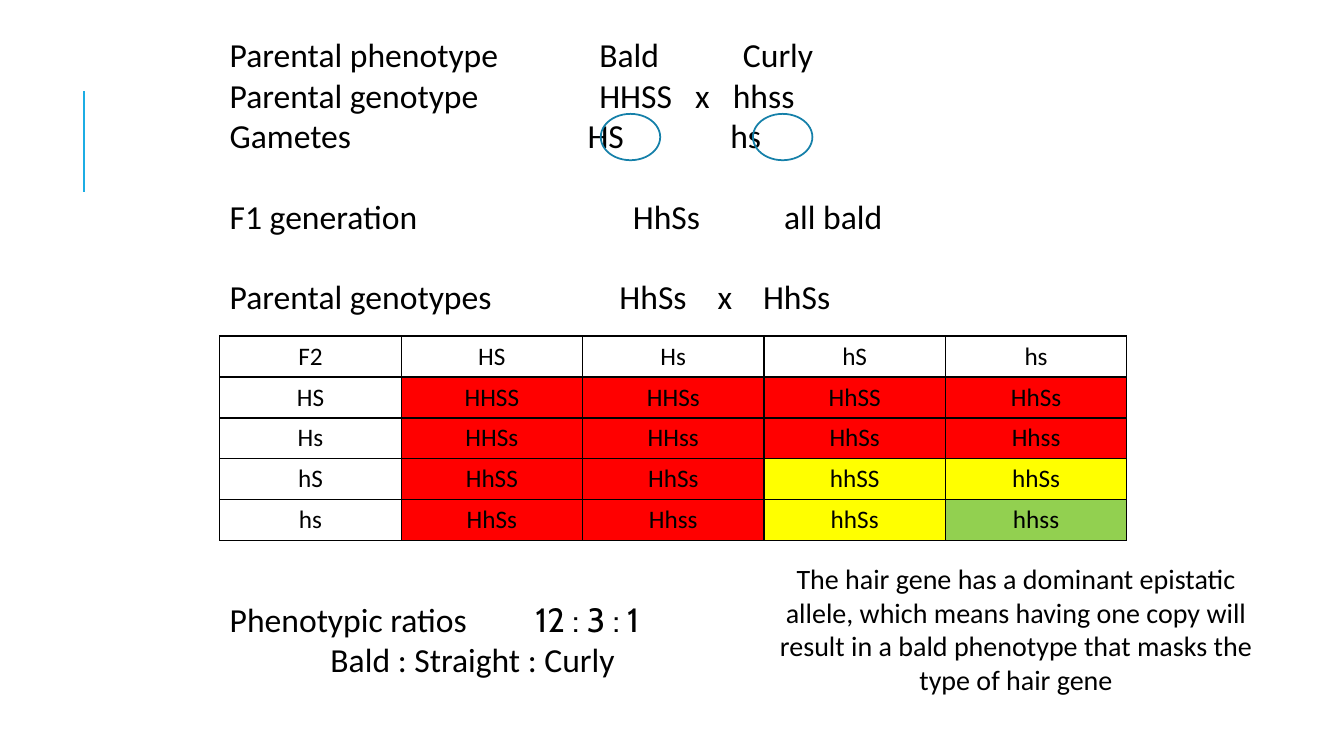
import dataclasses

import pptx
import pptx.dml.color
import pptx.enum.shapes
import pptx.enum.text
import pptx.oxml
import pptx.oxml.ns
import pptx.util

COLUMNS, ROWS = 160, 90
SLIDE_WIDTH = pptx.util.Inches(13.33)
SLIDE_HEIGHT = pptx.util.Inches(7.5)
GAMETES = ["HS", "Hs", "hS", "hs"]

# Lines of the cross: blank lines before, texts, tab columns
CROSS_LINES = [
    (0, ["Parental phenotype", "Bald", "Curly"], [44, 61.1]),
    (0, ["Parental genotype", "HHSS", "x", "hhss"], [44, 55.4, 59.9]),
    (0, ["Gametes", "HS", "hs"], [42.6, 59.6]),
    (1, ["F1 generation", "HhSs", "all bald"], [48, 66]),
    (1, ["Parental genotypes", "HhSs", "x", "HhSs"], [46.4, 58.1, 63.5]),
    (7, ["Phenotypic ratios", "12 : 3 : 1"], [36.4]),
    (0, ["", "Bald : Straight : Curly"], [12]),
]
NOTE = ("The hair gene has a dominant epistatic allele, which means having one copy "
        "will result in a bald phenotype that masks the type of hair gene")


@dataclasses.dataclass(frozen=True)
class Theme:
    font: str = "Calibri"
    ratio_font: str = "Cabin"
    cross_size: int = 24
    note_size: int = 20
    table_size: int = 18
    line_spacing: float = 1.2
    text: str = "000000"
    rule: str = "1CADE4"
    ring: str = "1580A9"
    bald: str = "FF0000"
    straight: str = "FFFF00"
    curly: str = "92D050"


THEME = Theme()


def across(columns):
    return round(SLIDE_WIDTH * columns / COLUMNS)


def down(rows):
    return round(SLIDE_HEIGHT * rows / ROWS)


def place(left, top, width, height):
    return across(left), down(top), across(width), down(height)


def color(value):
    return pptx.dml.color.RGBColor.from_string(value)


def apply_format(target, values):
    for name, value in values.items():
        setattr(target, name, value)


def add_run(paragraph, text, size, font=THEME.font):
    run = paragraph.add_run()
    run.text = text
    apply_format(run.font, {"name": font, "size": pptx.util.Pt(size)})
    run.font.color.rgb = color(THEME.text)


def add_text_box(slide, *box):
    frame = slide.shapes.add_textbox(*place(*box)).text_frame
    frame.word_wrap = True
    return frame


def set_tabs(paragraph, columns):
    properties = paragraph._p.get_or_add_pPr()
    tabs = pptx.oxml.parse_xml(f"<a:tabLst {pptx.oxml.ns.nsdecls('a')}/>")
    for column in columns:
        tab = tabs.makeelement(pptx.oxml.ns.qn("a:tab"),
                               {"pos": str(across(column)), "algn": "l"})
        tabs.append(tab)
    properties.append(tabs)


def add_cross(slide, *box):
    frame = add_text_box(slide, *box)
    pitch = THEME.cross_size * THEME.line_spacing
    for index, (gap, texts, tab_columns) in enumerate(CROSS_LINES):
        paragraph = frame.add_paragraph() if index else frame.paragraphs[0]
        apply_format(paragraph, {"line_spacing": pptx.util.Pt(pitch),
                                 "space_before": pptx.util.Pt(gap * pitch)})
        set_tabs(paragraph, tab_columns)
        label, *values = texts
        is_ratio = label == "Phenotypic ratios"
        add_run(paragraph, label + "\t", THEME.cross_size)
        add_run(paragraph, "\t".join(values), THEME.cross_size,
                THEME.ratio_font if is_ratio else THEME.font)


def add_note(slide, *box):
    paragraph = add_text_box(slide, *box).paragraphs[0]
    apply_format(paragraph, {
        "alignment": pptx.enum.text.PP_ALIGN.CENTER,
        "line_spacing": pptx.util.Pt(THEME.note_size * THEME.line_spacing)})
    add_run(paragraph, NOTE, THEME.note_size)


def combine(first, second):
    """Join two gametes gene by gene, dominant allele first."""
    return "".join("".join(sorted(pair)) for pair in zip(first, second))


def phenotype_color(genotype):
    if "H" in genotype:
        return THEME.bald
    return THEME.straight if "S" in genotype else THEME.curly


def add_borders(cell):
    properties = cell._tc.get_or_add_tcPr()
    for index, side in enumerate(("lnL", "lnR", "lnT", "lnB")):
        properties.insert(index, pptx.oxml.parse_xml(
            f"<a:{side} {pptx.oxml.ns.nsdecls('a')} w='{pptx.util.Pt(1)}'>"
            f"<a:solidFill><a:srgbClr val='{THEME.text}'/></a:solidFill></a:{side}>"))


def fill_cell(cell, text, fill=None):
    if fill:
        cell.fill.solid()
        cell.fill.fore_color.rgb = color(fill)
    else:
        cell.fill.background()
    paragraph = cell.text_frame.paragraphs[0]
    paragraph.alignment = pptx.enum.text.PP_ALIGN.CENTER
    add_run(paragraph, text, THEME.table_size)
    add_borders(cell)


def add_punnett_square(slide, *box):
    count = len(GAMETES) + 1
    table = slide.shapes.add_table(count, count, *place(*box)).table
    apply_format(table, {"first_row": False, "horz_banding": False})
    fill_cell(table.cell(0, 0), "F2")
    for row, mother in enumerate(GAMETES, 1):
        fill_cell(table.cell(0, row), mother)
        fill_cell(table.cell(row, 0), mother)
        for column, father in enumerate(GAMETES, 1):
            genotype = combine(mother, father)
            fill_cell(table.cell(row, column), genotype, phenotype_color(genotype))


def set_line(shape, value, width):
    shape.line.color.rgb = color(value)
    shape.line.width = pptx.util.Pt(width)


def add_rule(slide, column, start, end):
    rule = slide.shapes.add_connector(pptx.enum.shapes.MSO_CONNECTOR.STRAIGHT,
                                      across(column), down(start),
                                      across(column), down(end))
    set_line(rule, THEME.rule, 1.5)
    rule._element.spPr.append(pptx.oxml.parse_xml(
        f"<a:effectLst {pptx.oxml.ns.nsdecls('a')}/>"))


def add_gamete_ring(slide, *box):
    ring = slide.shapes.add_shape(pptx.enum.shapes.MSO_SHAPE.OVAL, *place(*box))
    ring.shadow.inherit = False
    ring.fill.background()
    set_line(ring, THEME.ring, 1.25)


def main():
    presentation = pptx.Presentation()
    apply_format(presentation, {"slide_width": SLIDE_WIDTH,
                                "slide_height": SLIDE_HEIGHT})
    slide = presentation.slides.add_slide(presentation.slide_layouts[6])
    add_rule(slide, 10, 22.8, 10.8)
    add_punnett_square(slide, 26.16, 40, 108, 24.4)
    add_cross(slide, 26.16, 3.48, 103.92, 86.4)
    add_note(slide, 91.2, 66.24, 59.52, 17.4)
    for left in (71.52, 89.64):
        add_gamete_ring(slide, left, 13.56, 7.08, 5.52)
    presentation.save("out.pptx")


if __name__ == "__main__":
    main()
